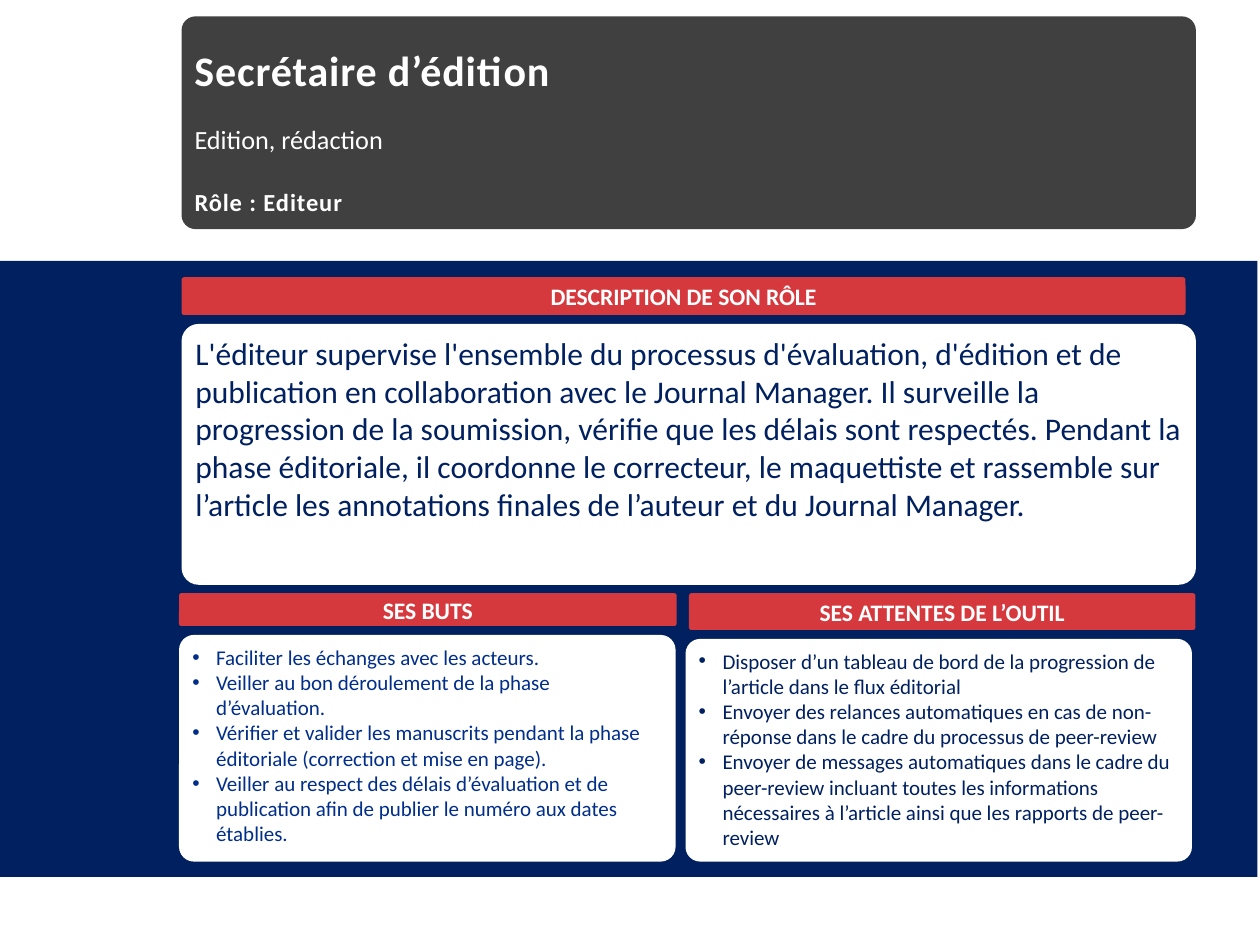
import pptx
import pptx.dml.color
import pptx.enum.shapes
import pptx.enum.text
import pptx.util
from dataclasses import dataclass
from lxml import etree

Cm, Pt = pptx.util.Cm, pptx.util.Pt
RGB = pptx.dml.color.RGBColor.from_string
Preset = pptx.enum.shapes.MSO_SHAPE
Align = pptx.enum.text.PP_ALIGN
Anchor = pptx.enum.text.MSO_ANCHOR
DRAWING_NS = "{http://schemas.openxmlformats.org/drawingml/2006/main}"


@dataclass(frozen=True)
class Theme:
    font: str = "Calibri"
    white: str = "FFFFFF"
    navy: str = "002060"
    blue: str = "002E89"
    red: str = "D5393D"
    charcoal: str = "404040"
    title: float = 24
    subtitle: float = 15
    role: float = 14
    heading: float = 13.5
    description: float = 18
    bullet: float = 12
    corner: float = 0.066


THEME = Theme()


@dataclass(frozen=True)
class Box:
    left: float
    top: float
    width: float
    height: float

    def lengths(self):
        return Cm(self.left), Cm(self.top), Cm(self.width), Cm(self.height)


def set_insets(frame, bottom=0.1):
    frame.word_wrap = True
    frame.margin_left = frame.margin_right = Cm(0.18)
    frame.margin_top, frame.margin_bottom = Cm(0.1), Cm(bottom)


def add_panel(slide, box, fill, preset=Preset.ROUNDED_RECTANGLE):
    panel = slide.shapes.add_shape(preset, *box.lengths())
    panel.shadow.inherit = False
    panel.fill.solid()
    panel.fill.fore_color.rgb = RGB(fill)
    panel.line.fill.background()
    if preset == Preset.ROUNDED_RECTANGLE:
        panel.adjustments[0] = THEME.corner
    set_insets(panel.text_frame)
    return panel


def write(paragraph, text, size, color, bold=False, align=Align.LEFT, spacing=0):
    paragraph.alignment = align
    run = paragraph.add_run()
    run.text = text
    run.font.name = THEME.font
    run.font.size = Pt(size)
    run.font.bold = bold
    run.font.color.rgb = RGB(color)
    if spacing:
        run.font._element.set("spc", str(int(spacing * 100)))


def add_bullet(paragraph):
    properties = paragraph._p.get_or_add_pPr()
    properties.set("marL", str(Cm(0.48)))
    properties.set("indent", str(-Cm(0.48)))
    etree.SubElement(properties, DRAWING_NS + "buFont", typeface="Arial")
    etree.SubElement(properties, DRAWING_NS + "buChar", char="•")


def profile_card(slide, box, name, activity, role):
    """Dark card with the persona's name, activity and role."""
    card = add_panel(slide, box, THEME.charcoal).text_frame
    set_insets(card, bottom=0.18)
    card.vertical_anchor = Anchor.BOTTOM
    write(card.paragraphs[0], activity, THEME.subtitle, THEME.white)
    role_line = card.add_paragraph()
    role_line.space_before = Pt(18)
    write(role_line, role, THEME.role, THEME.white, bold=True, spacing=0.5)

    # The slide title lies on top of the card
    title = slide.shapes.title
    title_box = Box(box.left + 0.08, box.top + 0.43, box.width - 0.16, 1.27)
    title.left, title.top, title.width, title.height = title_box.lengths()
    set_insets(title.text_frame)
    title.text_frame.auto_size = pptx.enum.text.MSO_AUTO_SIZE.NONE
    title.text_frame.vertical_anchor = Anchor.MIDDLE
    write(title.text_frame.paragraphs[0], name, THEME.title, THEME.white,
          bold=True, spacing=0.5)
    slide.shapes._spTree.append(title._element)


def section(slide, box, heading, lines, size, color, head_height,
            head_width, head_shift=0, bulleted=False):
    """Red heading bar above a white text panel that fills the rest of the box."""
    body_offset = head_height + 0.18
    body = add_panel(slide, Box(box.left, box.top + body_offset, box.width,
                                box.height - body_offset), THEME.white).text_frame
    body.vertical_anchor = Anchor.TOP
    for index, line in enumerate(lines):
        paragraph = body.add_paragraph() if index else body.paragraphs[0]
        if bulleted:
            add_bullet(paragraph)
        write(paragraph, line, size, color)

    bar = add_panel(slide, Box(box.left + head_shift, box.top, head_width,
                               head_height), THEME.red).text_frame
    bar.vertical_anchor = Anchor.MIDDLE
    write(bar.paragraphs[0], heading, THEME.heading, THEME.white,
          bold=True, align=Align.CENTER)


DESCRIPTION = [
    "L'éditeur supervise l'ensemble du processus d'évaluation, d'édition et de "
    "publication en collaboration avec le Journal Manager. Il surveille la "
    "progression de la soumission, vérifie que les délais sont respectés. "
    "Pendant la phase éditoriale, il coordonne le correcteur, le maquettiste et "
    "rassemble sur l’article les annotations finales de l’auteur et du Journal "
    "Manager.",
]
GOALS = [
    "Faciliter les échanges avec les acteurs.",
    "Veiller au bon déroulement de la phase d’évaluation.",
    "Vérifier et valider les manuscrits pendant la phase éditoriale "
    "(correction et mise en page).",
    "Veiller au respect des délais d’évaluation et de publication afin de "
    "publier le numéro aux dates établies.",
]
EXPECTATIONS = [
    "Disposer d’un tableau de bord de la progression de l’article dans le flux "
    "éditorial",
    "Envoyer des relances automatiques en cas de non-réponse dans le cadre du "
    "processus de peer-review",
    "Envoyer de messages automatiques dans le cadre du peer-review incluant "
    "toutes les informations nécessaires à l’article ainsi que les rapports de "
    "peer-review",
]


def main():
    deck = pptx.Presentation()
    deck.slide_width, deck.slide_height = Cm(25.4), Cm(19.05)
    slide = deck.slides.add_slide(deck.slide_layouts[5])

    # Navy band behind the three sections
    add_panel(slide, Box(0, 5.26, 25.35, 12.42), THEME.navy, Preset.RECTANGLE)

    profile_card(slide, Box(3.66, 0.33, 20.45, 4.29), "Secrétaire d’édition",
                 "Edition, rédaction", "Rôle : Editeur")

    # Role description, then goals and expectations side by side
    section(slide, Box(3.66, 5.59, 20.45, 6.2), "DESCRIPTION DE SON RÔLE",
            DESCRIPTION, THEME.description, THEME.navy,
            head_height=0.76, head_width=20.24)
    section(slide, Box(3.61, 11.96, 10.01, 5.41), "SES BUTS",
            GOALS, THEME.bullet, THEME.blue,
            head_height=0.66, head_width=10.03, bulleted=True)
    section(slide, Box(13.82, 11.96, 10.21, 5.41), "SES ATTENTES DE L’OUTIL",
            EXPECTATIONS, THEME.bullet, THEME.navy,
            head_height=0.74, head_width=10.21, head_shift=0.07, bulleted=True)

    deck.save("out.pptx")


if __name__ == "__main__":
    main()
